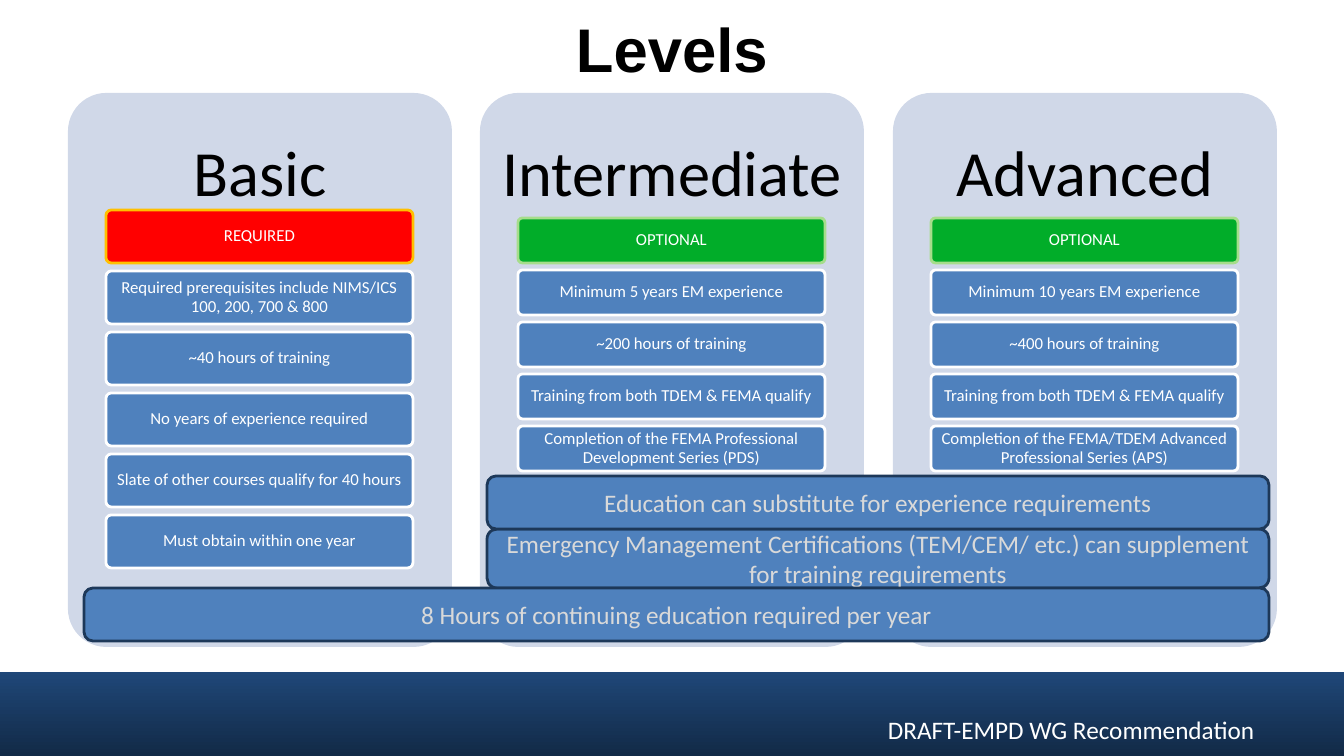
from pptx import Presentation
from pptx import util as u
from pptx.dml.color import RGBColor
from pptx.enum import shapes, text

PX = 12192000 / 1344
BLUE, WHITE = "4F81BD", "FFFFFF"

LEVELS = [
    ("Basic", "REQUIRED", "FF0000", "FFC000", 210, 53, 61, [
        "Required prerequisites include NIMS/ICS\v100, 200, 700 & 800",
        "~40 hours of training",
        "No years of experience required",
        "Slate of other courses qualify for 40 hours",
        "Must obtain within one year"]),
    ("Intermediate", "OPTIONAL", "01AD29", "A6DD8B", 218, 45, 52, [
        "Minimum 5 years EM experience",
        "~200 hours of training",
        "Training from both TDEM & FEMA qualify",
        "Completion of the FEMA Professional Development Series (PDS)"]),
    ("Advanced", "OPTIONAL", "01AD29", "A6DD8B", 218, 45, 52, [
        "Minimum 10 years EM experience",
        "~400 hours of training",
        "Training from both TDEM & FEMA qualify",
        "Completion of the FEMA/TDEM Advanced Professional Series (APS)"]),
]

BARS = [
    (487, 529, 782, 59, "Emergency Management Certifications (TEM/CEM/ etc.) "
                        "can supplement for training requirements"),
    (487, 476, 782, 53, "Education can substitute for experience requirements"),
    (84, 588, 1185, 53, "8 Hours of continuing education required per year"),
]


def px(n):
    return u.Emu(round(n * PX))


def rgb(color):
    return RGBColor.from_string(color)


def write(sp, words, size, color, font="Calibri", bold=False, spacing=None,
          inset=(10, 5), wrap=True, align=text.PP_ALIGN.CENTER,
          anchor=text.MSO_ANCHOR.MIDDLE):
    tf = sp.text_frame
    tf.word_wrap = wrap
    tf.vertical_anchor = anchor
    tf.margin_left = tf.margin_right = px(inset[0])
    tf.margin_top = tf.margin_bottom = px(inset[1])
    p = tf.paragraphs[0]
    p.text = words
    p.alignment = align
    if spacing:
        p.line_spacing = spacing
    for r in p.runs:
        r.font.size = u.Pt(size)
        r.font.name = font
        r.font.bold = bold
        r.font.color.rgb = rgb(color)


def textbox(s, x, y, w, h, words, size, color, **kw):
    sp = s.shapes.add_textbox(px(x), px(y), px(w), px(h))
    write(sp, words, size, color, **kw)


def rounded(s, x, y, w, h, fill, line=None, corner=0.1):
    sp = s.shapes.add_shape(shapes.MSO_SHAPE.ROUNDED_RECTANGLE,
                            px(x), px(y), px(w), px(h))
    sp.shadow.inherit = False
    sp.adjustments[0] = corner
    sp.fill.solid()
    sp.fill.fore_color.rgb = rgb(fill)
    if line:
        sp.line.color.rgb = rgb(line)
        sp.line.width = u.Pt(2)
    else:
        sp.line.fill.background()
    return sp


def footer(s, x, y, w, h):
    sp = s.shapes.add_shape(shapes.MSO_SHAPE.RECTANGLE,
                            px(x), px(y), px(w), px(h))
    sp.shadow.inherit = False
    sp.line.fill.background()
    sp.fill.gradient()
    sp.fill.gradient_angle = 270
    for stop, color in zip(sp.fill.gradient_stops, ("1F4778", "122A47")):
        stop.color.rgb = rgb(color)
    textbox(s, x + 878, y + 37, 393, 40, "DRAFT-EMPD WG Recommendation", 18,
            WHITE, wrap=False, align=text.PP_ALIGN.LEFT,
            anchor=text.MSO_ANCHOR.TOP)


def level_column(s, x, y, w, h, level):
    name, status, fill, line, top, row_h, pitch, items = level
    rounded(s, x, y, w, h, "D0D8E8")
    textbox(s, x, y, w, 166, name, 46, "000000", spacing=0.9, inset=(19, 19))
    rows = [(status, fill, line)] + [(item, BLUE, WHITE) for item in items]
    for i, (words, row_fill, row_line) in enumerate(rows):
        sp = rounded(s, x + 38, top + i * pitch, w - 77, row_h,
                     row_fill, row_line)
        write(sp, words, 12, WHITE, spacing=0.9, inset=(5, 5))


def bar(s, x, y, w, h, words):
    sp = rounded(s, x, y, w, h, BLUE, "1D3859", corner=0.17)
    write(sp, words, 18, "D9D9D9")


def main():
    prs = Presentation()
    prs.slide_width, prs.slide_height = px(1344), px(756)
    s = prs.slides.add_slide(prs.slide_layouts[6])
    footer(s, 0, 672, 1344, 84)
    textbox(s, 67, 0, 1210, 96, "Levels", 44, "000000", font="Arial", bold=True)
    for i, level in enumerate(LEVELS):
        level_column(s, 68 + i * 825 // 2, 93, 384, 554, level)
    for item in BARS:
        bar(s, *item)
    prs.save("out.pptx")


if __name__ == "__main__":
    main()
